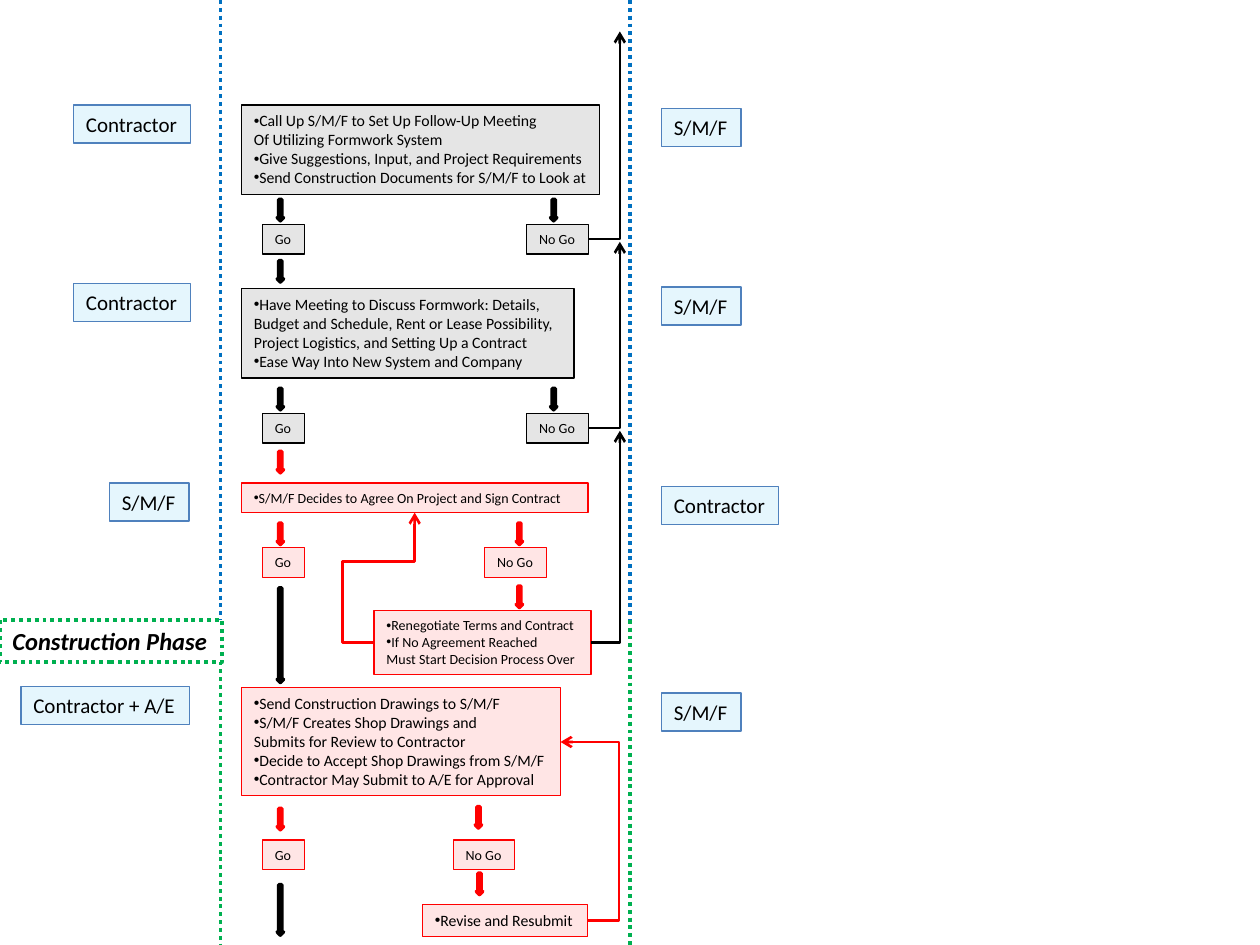
from dataclasses import dataclass

import pptx
import pptx.dml.color
import pptx.enum.dml
import pptx.enum.shapes
import pptx.enum.text
import pptx.oxml
import pptx.oxml.ns
import pptx.util
from lxml import etree

Pt = pptx.util.Pt
qn = pptx.oxml.ns.qn

BLACK, RED, BLUE, GREEN = "000000", "FF0000", "0070C0", "00B050"
LABEL_FILL, LABEL_LINE = "00B0F0", "4F81BD"
LEFT_DIVIDER, RIGHT_DIVIDER, PHASE_Y = 126, 360, 354.2
STEP_X, GO_X, RIGHT_LABEL_X, RETURN_X = 138, 150, 378, 354.2
GO_W, NO_GO_W, GATE_H = 24.2, 35.2, 17
LABEL_H, ARROW_W, ARROW_H = 21.8, 3.6, 12.2
GO_ARROW_X = 158.4


@dataclass
class Step:
    x: float
    y: float
    w: float
    h: float
    text: str
    color: str
    size: float = 9
    wrap: bool = False


@dataclass
class Label:
    x: float
    y: float
    w: float
    text: str


@dataclass
class Gate:
    y: float
    no_go_x: float
    color: str


@dataclass
class Arrow:
    x: float
    y: float
    color: str
    h: float = ARROW_H
    fill: str = ""


@dataclass
class Loop:
    begin: tuple[float, float]
    end: tuple[float, float]
    color: str
    preset: str = "bentConnector2"
    adjust: tuple[int, ...] = ()


STEPS = [
    Step(STEP_X, 60, 204.6, 51, "•Call Up S/M/F to Set Up Follow-Up Meeting\n"
         "Of Utilizing Formwork System\n"
         "•Give Suggestions, Input, and Project Requirements\n"
         "•Send Construction Documents for S/M/F to Look at", BLACK),
    Step(STEP_X, 165, 190, 51, "•Have Meeting to Discuss Formwork: Details,\n"
         "Budget and Schedule, Rent or Lease Possibility,\n"
         "Project Logistics, and Setting Up a Contract\n"
         "•Ease Way Into New System and Company", BLACK),
    Step(STEP_X, 276, 198, 17, "•S/M/F Decides to Agree On Project and Sign Contract",
         RED, 8, True),
    Step(213.8, 349, 124, 36.4, "•Renegotiate Terms and Contract\n"
         "•If No Agreement Reached\n"
         "Must Start Decision Process Over", RED, 8),
    Step(STEP_X, 393, 182.4, 61.8, "•Send Construction Drawings to S/M/F\n"
         "•S/M/F Creates Shop Drawings and\n"
         "Submits for Review to Contractor\n"
         "•Decide to Accept Shop Drawings from S/M/F\n"
         "•Contractor May Submit to A/E for Approval", RED),
    Step(241.4, 517, 94.5, 18.2, "•Revise and Resubmit", RED),
]
LABELS = [
    Label(42, 60, 67, "Contractor"), Label(RIGHT_LABEL_X, 62, 45.4, "S/M/F"),
    Label(42, 162, 67, "Contractor"), Label(RIGHT_LABEL_X, 164, 45.4, "S/M/F"),
    Label(62.6, 276, 45.4, "S/M/F"), Label(RIGHT_LABEL_X, 278, 67, "Contractor"),
    Label(12, 392.2, 96.5, "Contractor + A/E"), Label(RIGHT_LABEL_X, 396, 45.4, "S/M/F"),
]
GATES = [Gate(128.2, 301, BLACK), Gate(236.2, 301, BLACK),
         Gate(313, 277, RED), Gate(480, 259, RED)]
ARROWS = [
    Arrow(GO_ARROW_X, 114, BLACK), Arrow(314.6, 114, BLACK),
    Arrow(GO_ARROW_X, 149, BLACK),
    Arrow(GO_ARROW_X, 222, BLACK), Arrow(314.6, 222, BLACK),
    Arrow(GO_ARROW_X, 258, RED),
    Arrow(GO_ARROW_X, 299, RED), Arrow(295, 299, RED),
    Arrow(295, 335, RED), Arrow(GO_ARROW_X, 336, BLACK, 54),
    Arrow(GO_ARROW_X, 462, RED), Arrow(271.6, 461, RED),
    Arrow(272.2, 499, RED, fill=BLACK), Arrow(GO_ARROW_X, 505.6, BLACK, 28.8),
]
LOOPS = [
    Loop((336.2, 136.7), (RETURN_X, 18), BLACK),
    Loop((336.2, 244.7), (RETURN_X, 138.2), BLACK),
    Loop((337.8, 367.2), (RETURN_X, 246.2), BLACK),
    Loop((213.8, 367.2), (237, 293), RED, "bentConnector4", (-78600, 62200)),
    Loop((336, 526.2), (320.4, 424), RED, "bentConnector3", (-114600,)),
]
DIVIDERS = [(LEFT_DIVIDER, 0, PHASE_Y, BLUE), (RIGHT_DIVIDER, 0, PHASE_Y, BLUE),
            (LEFT_DIVIDER, 378, 540, GREEN), (RIGHT_DIVIDER, PHASE_Y, 540, GREEN)]


def rgb(color: str):
    return pptx.dml.color.RGBColor.from_string(color)


def set_line(line, color: str, width: float, dotted: bool = False) -> None:
    line.color.rgb = rgb(color)
    line.width = Pt(width)
    if dotted:
        line.dash_style = pptx.enum.dml.MSO_LINE.ROUND_DOT


def add_text(tf, text: str, *, size: float, bold: bool = False,
             italic: bool = False, wrap: bool = False) -> None:
    """Write one paragraph per line; a leading • becomes a real bullet."""
    tf.word_wrap = wrap
    tf.auto_size = pptx.enum.text.MSO_AUTO_SIZE.SHAPE_TO_FIT_TEXT
    for i, row in enumerate(text.split("\n")):
        p = tf.paragraphs[0] if i == 0 else tf.add_paragraph()
        r = p.add_run()
        r.text = row.removeprefix("•")
        r.font.name, r.font.size = "Calibri", Pt(size)
        r.font.bold, r.font.italic = bold, italic
        r.font.color.rgb = rgb(BLACK)
        if row.startswith("•"):
            pPr = p._p.get_or_add_pPr()
            etree.SubElement(pPr, qn("a:buFont"), typeface="Arial")
            etree.SubElement(pPr, qn("a:buChar"), char="•")


def add_box(s, x: float, y: float, w: float, h: float, text: str, *, line: str,
            fill: str = "", width: float = 0.75, dotted: bool = False, **fmt) -> None:
    """Draw a text box; its fill is a 10 % tint of the given colour."""
    sp = s.shapes.add_textbox(Pt(x), Pt(y), Pt(w), Pt(h))
    if fill:
        sp.fill.solid()
        sp.fill.fore_color.rgb = rgb(fill)
        clr = sp._element.spPr.find(".//" + qn("a:srgbClr"))
        etree.SubElement(clr, qn("a:alpha"), val="10000")
    set_line(sp.line, line, width, dotted)
    add_text(sp.text_frame, text, **fmt)


def add_arrow(s, arrow: Arrow) -> None:
    sp = s.shapes.add_shape(pptx.enum.shapes.MSO_SHAPE.DOWN_ARROW, Pt(arrow.x),
                            Pt(arrow.y), Pt(ARROW_W), Pt(arrow.h))
    sp.shadow.inherit = False
    sp.fill.solid()
    sp.fill.fore_color.rgb = rgb(arrow.fill or arrow.color)
    set_line(sp.line, arrow.color, 2)


def add_line(s, kind, begin: tuple[float, float], end: tuple[float, float],
             color: str, width: float, dotted: bool = False):
    cxn = s.shapes.add_connector(kind, *map(Pt, begin + end))
    set_line(cxn.line, color, width, dotted)
    etree.SubElement(cxn._element.spPr, qn("a:effectLst"))
    return cxn


def add_loop(s, loop: Loop) -> None:
    cxn = add_line(s, pptx.enum.shapes.MSO_CONNECTOR.ELBOW, loop.begin, loop.end,
                   loop.color, 1.5)
    spPr = cxn._element.spPr
    geom = spPr.find(qn("a:prstGeom"))
    geom.set("prst", loop.preset)
    for i, value in enumerate(loop.adjust, 1):
        etree.SubElement(geom.find(qn("a:avLst")), qn("a:gd"),
                         name=f"adj{i}", fmla=f"val {value}")
    etree.SubElement(spPr.find(qn("a:ln")), qn("a:tailEnd"), type="arrow")


def main() -> None:
    prs = pptx.Presentation()
    prs.slide_width, prs.slide_height = Pt(720), Pt(540)
    s = prs.slides.add_slide(prs.slide_layouts[6])
    for x, top, bottom, color in DIVIDERS:
        add_line(s, pptx.enum.shapes.MSO_CONNECTOR.STRAIGHT, (x, top), (x, bottom),
                 color, 2.25, dotted=True)
    for b in STEPS:
        add_box(s, b.x, b.y, b.w, b.h, b.text, line=b.color, fill=b.color,
                size=b.size, wrap=b.wrap)
    for b in LABELS:
        add_box(s, b.x, b.y, b.w, LABEL_H, b.text, line=LABEL_LINE, fill=LABEL_FILL, size=12)
    for g in GATES:
        for x, w, text in ((GO_X, GO_W, "Go"), (g.no_go_x, NO_GO_W, "No Go")):
            add_box(s, x, g.y, w, GATE_H, text, line=g.color, fill=g.color, size=8)
    add_box(s, 0, PHASE_Y, 126.7, 24.3, "Construction Phase", line=GREEN, width=2.25,
            dotted=True, size=14, bold=True, italic=True)
    for arrow in ARROWS:
        add_arrow(s, arrow)
    for loop in LOOPS:
        add_loop(s, loop)
    prs.save("out.pptx")


if __name__ == "__main__":
    main()
